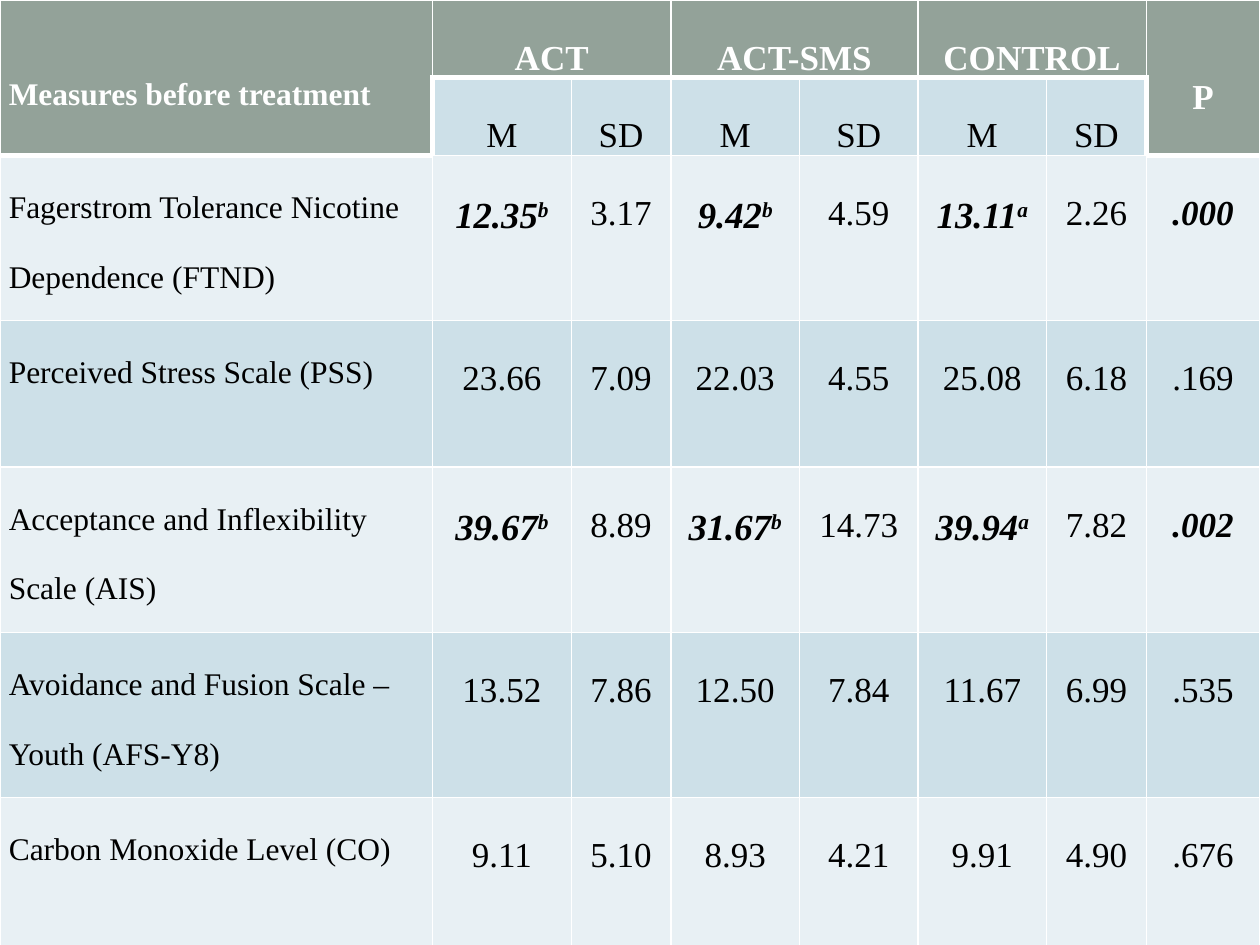
import pptx
import pptx.util
import pptx.dml.color
import pptx.enum.text
from lxml import etree
from pptx.oxml.ns import qn
from pptx.util import Inches, Pt

COLORS = {
    "header": "93A299",
    "band": "CDE0E8",
    "light": "E8F0F4",
    "white": "FFFFFF",
    "black": "000000",
}
FONT = "Times New Roman"
COL_WIDTHS = [3.43, 1.1, 0.79, 1.02, 0.94, 1.02, 0.79, 0.9]
ROW_HEIGHTS = [0.58, 0.58, 1.31, 1.16, 1.31, 1.31, 1.24]
GROUPS = ["ACT", "ACT-SMS", "CONTROL"]
MEASURES = [
    ("Fagerstrom Tolerance Nicotine Dependence (FTND)",
     ["12.35^b", "3.17", "9.42^b", "4.59", "13.11^a", "2.26", ".000"]),
    ("Perceived Stress Scale (PSS)",
     ["23.66", "7.09", "22.03", "4.55", "25.08", "6.18", ".169"]),
    ("Acceptance and Inflexibility Scale (AIS)",
     ["39.67^b", "8.89", "31.67^b", "14.73", "39.94^a", "7.82", ".002"]),
    ("Avoidance and Fusion Scale – Youth (AFS-Y8)",
     ["13.52", "7.86", "12.50", "7.84", "11.67", "6.99", ".535"]),
    ("Carbon Monoxide Level (CO)",
     ["9.11", "5.10", "8.93", "4.21", "9.91", "4.90", ".676"]),
]
SIGNIFICANT = {".000", ".002"}
P_COL = len(COL_WIDTHS) - 1


def rgb(name):
    return pptx.dml.color.RGBColor.from_string(COLORS[name])


def add_run(p, text, size, color, bold=False, italic=False, raised=False):
    r = p.add_run()
    r.text = text
    f = r.font
    f.name, f.size, f.bold, f.italic = FONT, Pt(size), bold, italic
    f.color.rgb = rgb(color)
    if raised:
        r._r.get_or_add_rPr().set("baseline", "30000")


def set_borders(cell, thick):
    tcPr = cell._tc.get_or_add_tcPr()
    for side in "LRTB":
        width = Pt(3 if side in thick else 1)
        ln = etree.SubElement(tcPr, qn("a:ln" + side), w=str(width))
        fill = etree.SubElement(ln, qn("a:solidFill"))
        etree.SubElement(fill, qn("a:srgbClr"), val=COLORS["white"])


def thick_sides(row, col):
    outer = col in (0, P_COL)
    if row == 0:
        return "B"
    if row == 1:
        if outer:
            return "B"
        return "T" + ("L" if col == 1 else "") + ("R" if col == P_COL - 1 else "")
    return "T" if row == 2 and outer else ""


def row_fill(row, col):
    if row == 0 or (row == 1 and col in (0, P_COL)):
        return "header"
    return "band" if row % 2 else "light"


def style_cell(cell, row, col):
    cell.margin_left = cell.margin_right = Inches(0.07)
    cell.margin_top = cell.margin_bottom = 0
    set_borders(cell, thick_sides(row, col))
    cell.fill.solid()
    cell.fill.fore_color.rgb = rgb(row_fill(row, col))


def start_text(cell, centered=True):
    p = cell.text_frame.paragraphs[0]
    p.line_spacing = 2.0
    align = pptx.enum.text.PP_ALIGN
    p.alignment = align.CENTER if centered else align.LEFT
    return p


def fill_header(table):
    table.cell(0, 0).merge(table.cell(1, 0))
    table.cell(0, P_COL).merge(table.cell(1, P_COL))
    titles = [(0, "Measures before treatment", 18), (P_COL, "P", 20)]
    for i, group in enumerate(GROUPS):
        col = 1 + 2 * i
        table.cell(0, col).merge(table.cell(0, col + 1))
        titles.append((col, group, 20))
        for j, label in enumerate(["M", "SD"]):
            add_run(start_text(table.cell(1, col + j)), label, 20, "black")
    for col, text, size in titles:
        cell = table.cell(0, col)
        cell.vertical_anchor = pptx.enum.text.MSO_ANCHOR.MIDDLE
        add_run(start_text(cell, col > 0), text, size, "white", bold=True)


def fill_measures(table):
    for row, (name, values) in enumerate(MEASURES, 2):
        add_run(start_text(table.cell(row, 0), False), name, 18, "black")
        for col, value in enumerate(values, 1):
            p = start_text(table.cell(row, col))
            number, _, mark = value.partition("^")
            strong = bool(mark) or value in SIGNIFICANT
            size = 21 if mark else 20
            add_run(p, number, size, "black", strong, strong)
            if mark:
                add_run(p, mark, size, "black", True, True, raised=True)


def add_measures_table(s, left, top, width, height):
    table = s.shapes.add_table(len(ROW_HEIGHTS), len(COL_WIDTHS), Inches(left),
                               Inches(top), Inches(width), Inches(height)).table
    for column, w in zip(table.columns, COL_WIDTHS):
        column.width = Inches(w * width / sum(COL_WIDTHS))
    for row, h in zip(table.rows, ROW_HEIGHTS):
        row.height = Inches(h * height / sum(ROW_HEIGHTS))
    for row in range(len(ROW_HEIGHTS)):
        for col in range(len(COL_WIDTHS)):
            style_cell(table.cell(row, col), row, col)
    fill_header(table)
    fill_measures(table)


def main():
    prs = pptx.Presentation()
    prs.slide_width, prs.slide_height = Inches(10), Inches(7.5)
    s = prs.slides.add_slide(prs.slide_layouts[6])
    add_measures_table(s, 0, 0, 10, 7.5)
    prs.save("out.pptx")


if __name__ == "__main__":
    main()
